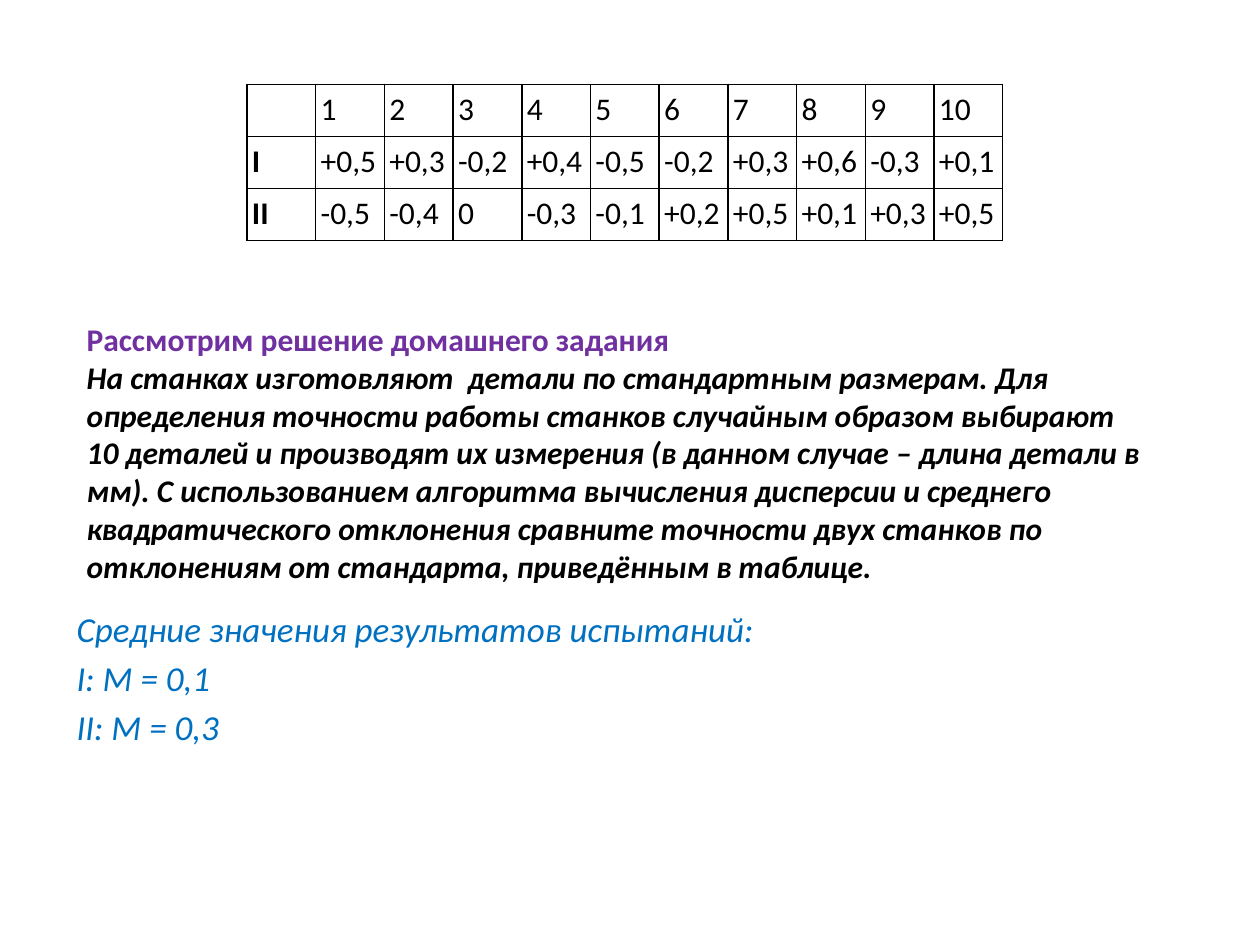
from lxml.etree import SubElement
from pptx import Presentation
from pptx.dml.color import RGBColor
from pptx.enum.text import MSO_ANCHOR
from pptx.oxml.ns import qn
from pptx.util import Inches, Pt

BLACK = RGBColor(0x00, 0x00, 0x00)
PURPLE = RGBColor(0x70, 0x30, 0xA0)
BLUE = RGBColor(0x00, 0x70, 0xC0)

HEADING = "Рассмотрим решение домашнего задания"
TASK = (
    "На станках изготовляют  детали по стандартным размерам. "
    "Для определения точности работы станков случайным образом выбирают "
    "10 деталей и производят их измерения (в данном случае – длина детали в мм). "
    "С использованием алгоритма вычисления дисперсии и среднего "
    "квадратического отклонения сравните точности двух станков по "
    "отклонениям от стандарта, приведённым в таблице."
)
MEANS = [
    "Средние значения результатов испытаний:",
    "I: M = 0,1",
    "II: M = 0,3",
]
ROWS = [
    ["", *map(str, range(1, 11))],
    "I +0,5 +0,3 -0,2 +0,4 -0,5 -0,2 +0,3 +0,6 -0,3 +0,1".split(),
    "II -0,5 -0,4 0 -0,3 -0,1 +0,2 +0,5 +0,1 +0,3 +0,5".split(),
]


def write(para, text, font="Calibri", size=18, color=BLACK, bold=False, italic=False):
    run = para.add_run()
    run.text = text
    run.font.name = font
    run.font.size = Pt(size)
    run.font.color.rgb = color
    run.font.bold = bold
    run.font.italic = italic


def border(cell, color=BLACK, width=1):
    """Draw a solid line on all four sides of a cell."""
    props = cell._tc.get_or_add_tcPr()
    for place, side in enumerate(("a:lnL", "a:lnR", "a:lnT", "a:lnB")):
        line = SubElement(props, qn(side), w=str(Pt(width)))
        fill = SubElement(line, qn("a:solidFill"))
        SubElement(fill, qn("a:srgbClr"), val=str(color))
        props.insert(place, line)


class Page:
    """Holds the text font and the current slide."""

    def __init__(self, slide, font="Calibri"):
        self.slide = slide
        self.font = font

    def box(self, left, top, width, height, anchor=MSO_ANCHOR.TOP):
        shape = self.slide.shapes.add_textbox(
            Inches(left), Inches(top), Inches(width), Inches(height))
        frame = shape.text_frame
        frame.word_wrap = True
        frame.vertical_anchor = anchor
        return frame

    def title(self, head, body, *place):
        para = self.box(*place, anchor=MSO_ANCHOR.BOTTOM).paragraphs[0]
        write(para, head, font=self.font, color=PURPLE, bold=True)
        para.add_line_break()
        write(para, body, font=self.font, bold=True, italic=True)

    def lines(self, texts, *place):
        frame = self.box(*place)
        for index, text in enumerate(texts):
            para = frame.add_paragraph() if index else frame.paragraphs[0]
            if index:
                para.space_before = Pt(4)
            write(para, text, font=self.font, size=20, color=BLUE, italic=True)

    def table(self, rows, left, top, width, height):
        shape = self.slide.shapes.add_table(
            len(rows), len(rows[0]),
            Inches(left), Inches(top), Inches(width), Inches(height))
        table = shape.table
        table.first_row = table.horz_banding = False
        for r, row in enumerate(rows):
            for c, text in enumerate(row):
                cell = table.cell(r, c)
                cell.margin_left = cell.margin_right = Inches(0.04)
                cell.margin_top = cell.margin_bottom = Inches(0.05)
                cell.fill.background()
                border(cell)
                if text:
                    write(cell.text_frame.paragraphs[0], text,
                          font=self.font, bold=c == 0)


def main():
    deck = Presentation()
    deck.slide_width = Inches(10)
    deck.slide_height = Inches(7.5)
    page = Page(deck.slides.add_slide(deck.slide_layouts[6]))
    page.title(HEADING, TASK, 0.59, 2.33, 8.66, 2.36)
    page.table(ROWS, 1.96, 0.67, 6, 1.24)
    page.lines(MEANS, 0.51, 4.77, 8.66, 1.98)
    deck.save("out.pptx")


if __name__ == "__main__":
    main()
